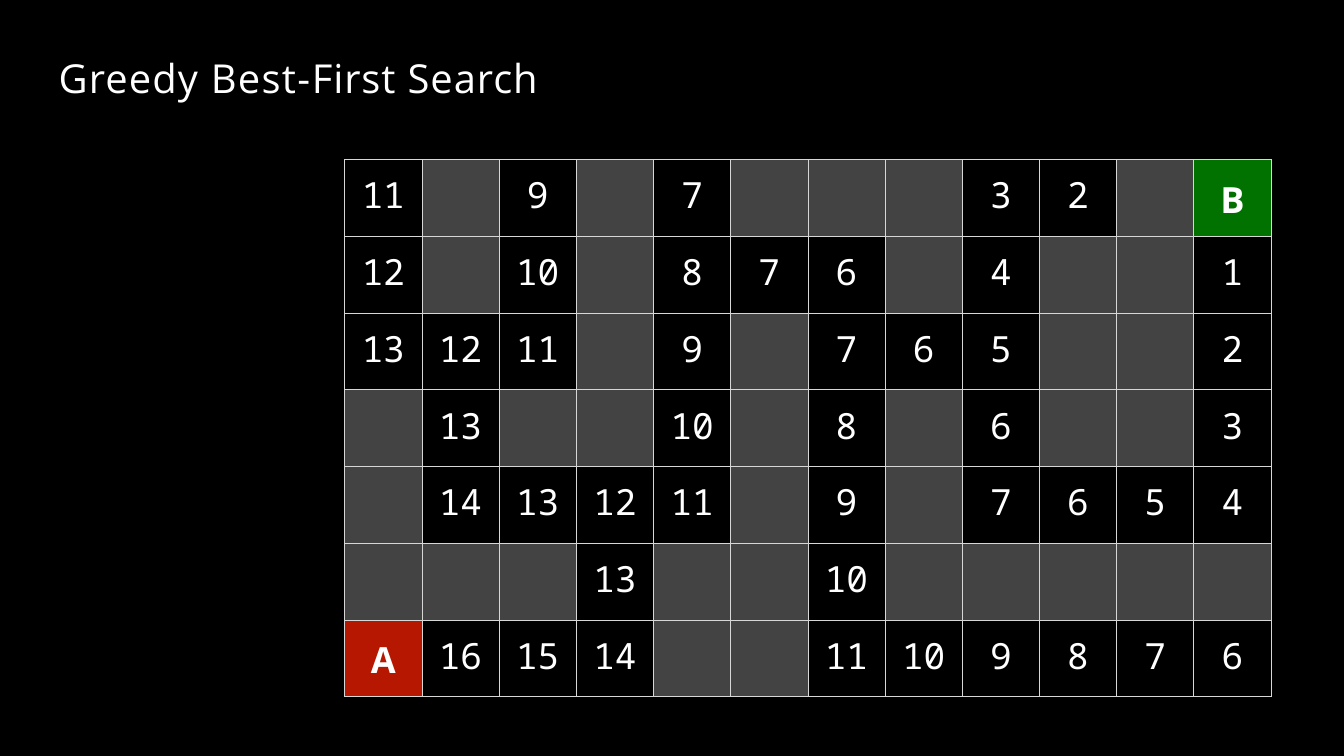
from dataclasses import dataclass
from typing import Optional

from lxml import etree
from pptx import Presentation
from pptx.dml.color import RGBColor
from pptx.enum.text import MSO_ANCHOR, MSO_AUTO_SIZE, PP_ALIGN
from pptx.oxml.ns import qn
from pptx.util import Inches, Pt

LEFT, CENTER = PP_ALIGN.LEFT, PP_ALIGN.CENTER
MIDDLE = MSO_ANCHOR.MIDDLE
NO_AUTOFIT = MSO_AUTO_SIZE.NONE

BLACK = RGBColor(0x00, 0x00, 0x00)
WHITE = RGBColor(0xFF, 0xFF, 0xFF)
WALL_GRAY = RGBColor(0x43, 0x43, 0x43)
START_RED = RGBColor(0xB5, 0x17, 0x00)
GOAL_GREEN = RGBColor(0x01, 0x71, 0x00)
GRID_LINE = RGBColor(0xD6, 0xD7, 0xD6)

WALL = "#"
MAZE = [row.split() for row in (
    "11 # 9 # 7 # # # 3 2 # B",
    "12 # 10 # 8 7 6 # 4 # # 1",
    "13 12 11 # 9 # 7 6 5 # # 2",
    "# 13 # # 10 # 8 # 6 # # 3",
    "# 14 13 12 11 # 9 # 7 6 5 4",
    "# # # 13 # # 10 # # # # #",
    "A 16 15 14 # # 11 10 9 8 7 6",
)]
TITLE_SPANS = (("Greedy ", 1.3), ("Best-", 1.6), ("First Search", 1.1))


@dataclass(frozen=True)
class CellStyle:
    fill: Optional[RGBColor] = None
    font: str = "Noto Sans Mono"
    bold: bool = False
    spacing: float = -0.5
    top: float = 0.18


ONE_DIGIT = CellStyle()
TWO_DIGITS = CellStyle(spacing=-0.2)
SPECIAL = {
    WALL: CellStyle(fill=WALL_GRAY),
    "A": CellStyle(START_RED, "Open Sans", True, 2, 0.25),
    "B": CellStyle(GOAL_GREEN, "Open Sans", True, 3.5, 0.26),
}


def style_for(label: str) -> CellStyle:
    return SPECIAL.get(label, TWO_DIGITS if len(label) == 2 else ONE_DIGIT)


def add_span(para, text: str, spacing: float) -> None:
    """Add a run with letter spacing in points."""
    span = para.add_run()
    span.text = text
    span.font._element.set("spc", str(round(spacing * 100)))


def set_font(font, name: str, size: float, bold: bool = False) -> None:
    font.name = name
    font.size = Pt(size)
    font.bold = bold
    font.color.rgb = WHITE


def add_borders(cell) -> None:
    properties = cell._tc.get_or_add_tcPr()
    for side in ("a:lnL", "a:lnR", "a:lnT", "a:lnB"):
        line = etree.SubElement(properties, qn(side), w=str(Pt(1)))
        solid = etree.SubElement(line, qn("a:solidFill"))
        etree.SubElement(solid, qn("a:srgbClr"), val=str(GRID_LINE))


def fill_cell(cell, label: str) -> None:
    style = style_for(label)
    add_borders(cell)
    if style.fill is None:
        cell.fill.background()
    else:
        cell.fill.solid()
        cell.fill.fore_color.rgb = style.fill
    cell.margin_left = cell.margin_right = cell.margin_bottom = 0
    cell.margin_top = Inches(style.top)
    if label != WALL:
        para = cell.text_frame.paragraphs[0]
        para.alignment = CENTER
        add_span(para, label, style.spacing)
        set_font(para.font, style.font, 42.5, style.bold)


def add_maze(page) -> None:
    frame = page.shapes.add_table(len(MAZE), len(MAZE[0]), Inches(5.64),
                                  Inches(2.61), Inches(15.16), Inches(8.79))
    table = frame.table
    table.first_row = table.horz_banding = False
    for row, labels in enumerate(MAZE):
        for column, label in enumerate(labels):
            fill_cell(table.cell(row, column), label)


def format_title(title) -> None:
    title.left, title.top = Inches(0.96), Inches(0.86)
    title.width, title.height = Inches(12.65), Inches(0.81)
    frame = title.text_frame
    frame.margin_left = frame.margin_right = frame.margin_bottom = 0
    frame.margin_top = Inches(0.01)
    frame.auto_size = NO_AUTOFIT
    frame.vertical_anchor = MIDDLE
    para = frame.paragraphs[0]
    para.alignment = LEFT
    for text, spacing in TITLE_SPANS:
        add_span(para, text, spacing)
    set_font(para.font, "Open Sans", 47)


def main() -> None:
    deck = Presentation()
    deck.slide_width, deck.slide_height = Inches(21.99), Inches(12.37)
    title_only = deck.slide_layouts[5]
    page = deck.slides.add_slide(title_only)
    page.background.fill.solid()
    page.background.fill.fore_color.rgb = BLACK
    format_title(page.shapes.title)
    add_maze(page)
    deck.save("out.pptx")


if __name__ == "__main__":
    main()
